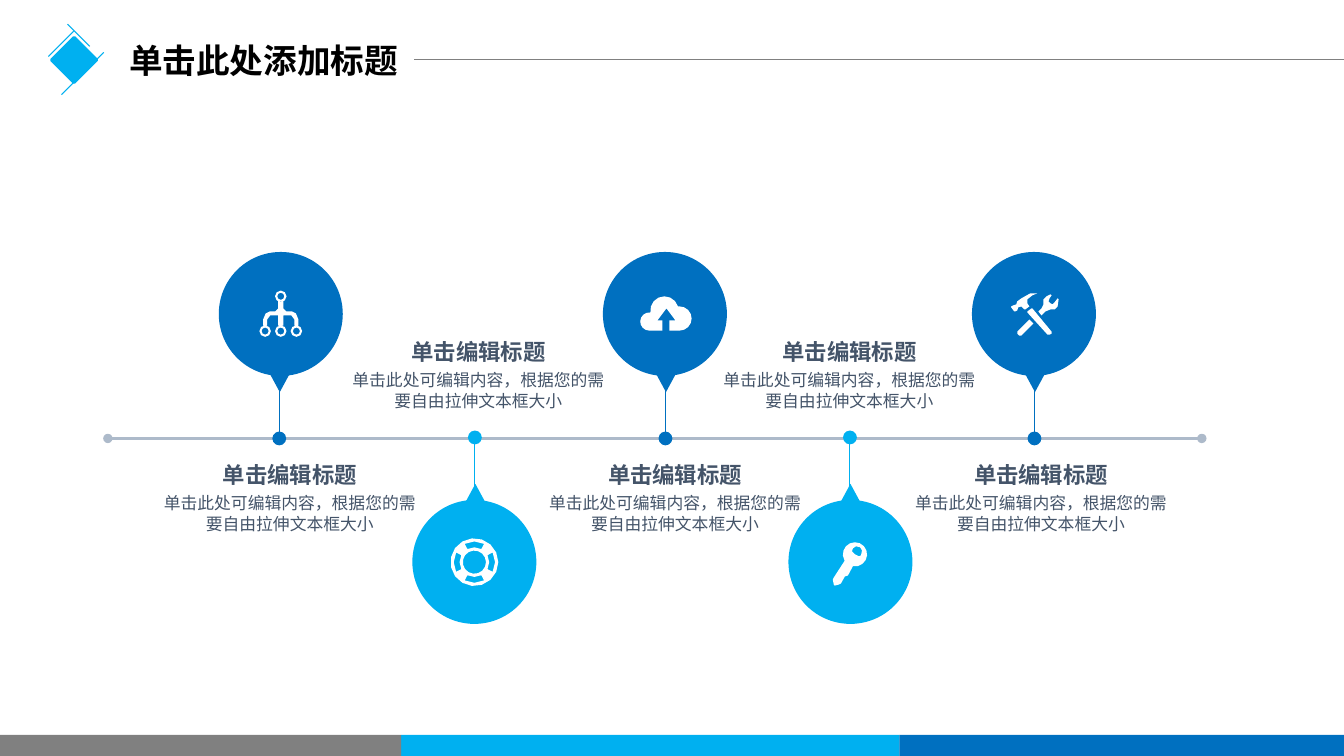
from math import cos, radians, sin

from lxml import etree
from pptx import Presentation
from pptx.dml.color import RGBColor
from pptx.enum.shapes import MSO_CONNECTOR, MSO_SHAPE as SHAPE
from pptx.enum.text import MSO_ANCHOR as ANCHOR, PP_ALIGN as ALIGN
from pptx.oxml.ns import qn
from pptx.util import Inches, Pt

BLACK = RGBColor(0x00, 0x00, 0x00)
WHITE = RGBColor(0xFF, 0xFF, 0xFF)
GREY = RGBColor(0x80, 0x80, 0x80)
SKY = RGBColor(0x00, 0xB0, 0xF0)
BLUE = RGBColor(0x00, 0x70, 0xC0)
AXIS_GREY = RGBColor(0xAD, 0xBA, 0xCA)
SLATE = RGBColor(0x44, 0x54, 0x69)
CJK_FONT = "Noto Sans CJK SC"

HEADING = "单击编辑标题"
BODY = "单击此处可编辑内容，根据您的需要自由拉伸文本框大小"


def arc(center_x, center_y, radius, start=0, end=360):
    """Points along a circle; degrees run clockwise from the right."""
    span = end - start
    steps = max(2, round(abs(span) / (24 if radius > 0.08 else 45)))
    count = steps if span == 360 else steps + 1
    angles = [radians(start + span * i / steps) for i in range(count)]
    return [(center_x + radius * cos(a), center_y + radius * sin(a)) for a in angles]


def add_line(x1, y1, x2, y2, color, width=0.75, ends=(), end_size="med"):
    """Draw a line; ends lists headEnd and tailEnd where a dot is wanted."""
    line = slide.shapes.add_connector(
        MSO_CONNECTOR.STRAIGHT, Inches(x1), Inches(y1), Inches(x2), Inches(y2))
    line.line.color.rgb = color
    line.line.width = Pt(width)
    for end in ends:
        etree.SubElement(line.line._get_or_add_ln(), qn("a:" + end),
                         type="oval", w=end_size, len=end_size)
    etree.SubElement(line._element.spPr, qn("a:effectLst"))


presentation = Presentation()
presentation.slide_width = Inches(13.33)
presentation.slide_height = Inches(7.5)
slide = presentation.slides.add_slide(presentation.slide_layouts[5])

# Title and header rule
title = slide.shapes.title
title.left, title.top, title.width, title.height = map(Inches, (1.18, 0.35, 2.91, 0.5))
title.text_frame.word_wrap = False
title.text_frame.vertical_anchor = ANCHOR.MIDDLE
paragraph = title.text_frame.paragraphs[0]
paragraph.alignment = ALIGN.LEFT
run = paragraph.add_run()
run.text = "单击此处添加标题"
run.font.size = Pt(24)
run.font.bold = True
run.font.color.rgb = BLACK
run.font.name = CJK_FONT
etree.SubElement(run._r.get_or_add_rPr(), qn("a:ea"), typeface=CJK_FONT)
add_line(4.11, 0.59, 13.33, 0.59, GREY)

# Footer bands, header diamond, then the timeline discs and pointers
filled_shapes = [
    (SHAPE.RECTANGLE, 3.98, 7.29, 4.94, 0.21, SKY, 0),
    (SHAPE.RECTANGLE, 8.92, 7.29, 4.41, 0.21, BLUE, 0),
    (SHAPE.RECTANGLE, 0, 7.29, 3.98, 0.21, GREY, 0),
    (SHAPE.DIAMOND, 0.51, 0.37, 0.45, 0.45, SKY, 0),
]
# Stem x, disc left, text left, whether the disc is above the axis
stations = [
    (2.77, 2.17, 1.6, True),
    (4.71, 4.09, 3.47, False),
    (6.6, 5.98, 5.42, True),
    (8.43, 7.82, 7.15, False),
    (10.26, 9.64, 9.05, True),
]
for stem_x, disc_left, text_left, above in stations:
    color = BLUE if above else SKY
    disc_top, pointer_top, turn = (2.5, 3.64, 180) if above else (4.96, 4.8, 0)
    filled_shapes += [
        (SHAPE.OVAL, disc_left, disc_top, 1.23, 1.23, color, 0),
        (SHAPE.ISOSCELES_TRIANGLE, stem_x - 0.13, pointer_top, 0.27, 0.25, color, turn),
    ]

add_line(1.07, 4.35, 11.92, 4.35, AXIS_GREY, 2.25, ("headEnd", "tailEnd"))
for kind, left, top, width, height, color, turn in filled_shapes:
    shape = slide.shapes.add_shape(
        kind, Inches(left), Inches(top), Inches(width), Inches(height))
    shape.shadow.inherit = False
    shape.rotation = turn
    shape.fill.solid()
    shape.fill.fore_color.rgb = color
    if kind == SHAPE.DIAMOND:
        shape.line.color.rgb = color
        shape.line.width = Pt(2)
        etree.SubElement(shape.line._get_or_add_ln(), qn("a:round"))
    else:
        shape.line.fill.background()

for ends in ((0.67, 0.24, 0.89, 0.46), (0.73, 0.31, 0.48, 0.56), (0.61, 0.94, 1.03, 0.52)):
    add_line(*ends, SKY)

# Stems and captions
for stem_x, disc_left, text_left, above in stations:
    stem_top, axis_y = (3.83, 4.35) if above else (4.86, 4.34)
    add_line(stem_x, stem_top, stem_x, axis_y, BLUE if above else SKY,
             ends=("tailEnd",), end_size="lg")
    heading_top = 4.57 if above else 3.35
    for text, top, height, size, spacing, bold in (
            (HEADING, heading_top, 0.27, 16, 19.5, True),
            (BODY, heading_top + 0.32, 0.4, 12, 14.6, False)):
        box = slide.shapes.add_textbox(
            Inches(text_left), Inches(top), Inches(2.55), Inches(height))
        frame = box.text_frame
        frame.word_wrap = True
        frame.margin_left = frame.margin_right = frame.margin_top = frame.margin_bottom = 0
        paragraph = frame.paragraphs[0]
        paragraph.alignment = ALIGN.CENTER
        paragraph.line_spacing = Pt(spacing)
        run = paragraph.add_run()
        run.text = text
        run.font.size = Pt(size)
        run.font.bold = bold
        run.font.color.rgb = SLATE
        run.font.name = "Arial"
        etree.SubElement(run._r.get_or_add_rPr(), qn("a:ea"), typeface=CJK_FONT)

# Icons: each is a list of closed contours, inner ones cut holes
tree_x = 2.785
tree_half = [(0.025, 2.99), (0.025, 3.06), (0.055, 3.09), (0.11, 3.09),
             (0.15, 3.11), (0.175, 3.17), (0.175, 3.23), (0.135, 3.23), (0.135, 3.17),
             (0.105, 3.13), (0.025, 3.13), (0.025, 3.23)]
tree = [[(tree_x + dx, y) for dx, y in tree_half]
        + [(tree_x - dx, y) for dx, y in reversed(tree_half)]]
for dx, y in ((0, 2.94), (-0.155, 3.285), (0, 3.285), (0.155, 3.285)):
    tree += [arc(tree_x + dx, y, radius) for radius in (0.057, 0.035)]

lifebuoy = [arc(4.705, 5.577, radius) for radius in (0.237, 0.115)]
for middle in range(0, 360, 90):
    lifebuoy.append(arc(4.705, 5.577, 0.205, middle - 28, middle + 28)
                    + arc(4.705, 5.577, 0.147, middle + 28, middle - 28))

cloud = [arc(6.44, 3.19, 0.09, 90, 275) + arc(6.59, 3.08, 0.14, 172, 343)
         + arc(6.74, 3.16, 0.12, 270, 450)
         + [(6.64, 3.28), (6.64, 3.18), (6.7, 3.18), (6.61, 3.06),
            (6.52, 3.18), (6.57, 3.18), (6.57, 3.28)]]

key = [arc(8.48, 5.5, 0.12, -210, 100)
       + [(8.41, 5.71), (8.38, 5.72), (8.34, 5.79), (8.32, 5.8),
          (8.28, 5.81), (8.27, 5.8), (8.26, 5.75), (8.27, 5.73), (8.38, 5.56)],
       [(8.54, 5.51), (8.52, 5.52), (8.48, 5.5), (8.45, 5.47),
        (8.46, 5.44), (8.49, 5.42), (8.53, 5.43), (8.55, 5.46)]]

hammer_head = [(10.1, 3.05), (10.13, 3.04), (10.16, 3.07), (10.17, 3.07), (10.21, 3.04),
               (10.19, 3.01), (10.19, 2.97), (10.24, 2.93), (10.29, 2.91), (10.22, 2.91),
               (10.13, 2.96), (10.09, 2.99), (10.08, 3.02), (10.05, 3.03), (10.03, 3.04),
               (10.03, 3.05), (10.06, 3.09), (10.07, 3.09), (10.09, 3.08)]
hammer_handle = [(10.24, 3.06), (10.23, 3.06), (10.19, 3.09), (10.19, 3.1),
                 (10.39, 3.32), (10.41, 3.32), (10.43, 3.31), (10.43, 3.29)]
wrench_head = [(10.5, 2.97), (10.49, 2.96), (10.46, 3), (10.44, 3.02), (10.42, 3.01),
               (10.4, 2.99), (10.41, 2.96), (10.43, 2.93), (10.42, 2.92), (10.38, 2.94),
               (10.35, 2.97), (10.35, 3.02), (10.33, 3.06), (10.3, 3.09), (10.33, 3.13),
               (10.37, 3.09), (10.42, 3.07), (10.46, 3.07), (10.49, 3.04)]
wrench_handle = [(10.09, 3.29), (10.09, 3.31), (10.11, 3.33), (10.13, 3.33),
                 (10.25, 3.21), (10.21, 3.17)]
tools = [hammer_head, hammer_handle, wrench_head, wrench_handle]

for icon in (tree, lifebuoy, cloud, key, tools):
    contours = [[(Inches(x), Inches(y)) for x, y in contour] for contour in icon]
    builder = slide.shapes.build_freeform(*contours[0][0])
    builder.add_line_segments(contours[0][1:], close=True)
    for contour in contours[1:]:
        builder.move_to(*contour[0])
        builder.add_line_segments(contour[1:], close=True)
    shape = builder.convert_to_shape()
    shape.shadow.inherit = False
    shape.fill.solid()
    shape.fill.fore_color.rgb = WHITE
    shape.line.fill.background()

presentation.save("out.pptx")
